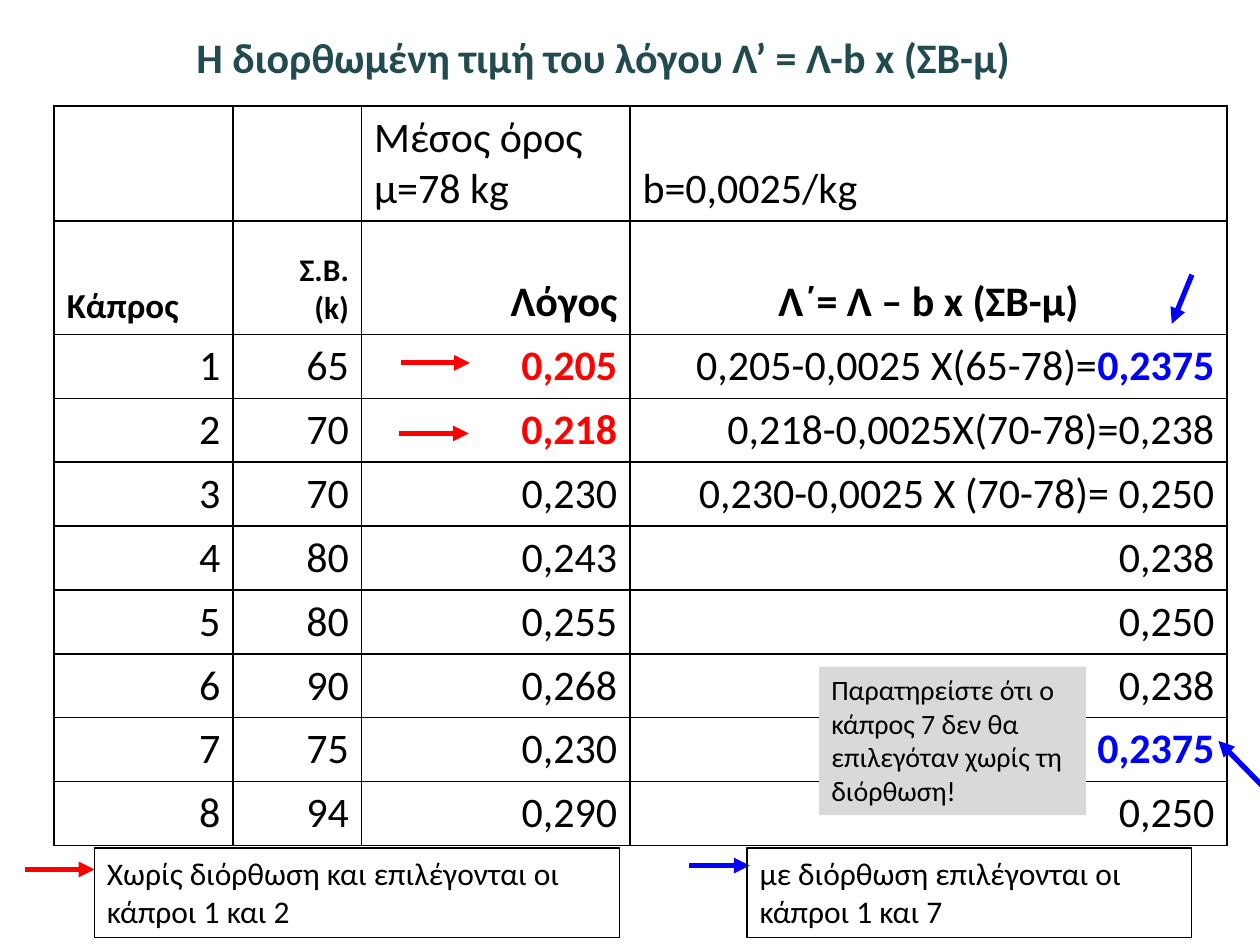
"""Build the slide that compares boar ratios before and after correction for body weight."""
from typing import NamedTuple, Optional

from lxml.etree import SubElement
from pptx import Presentation
from pptx.dml.color import RGBColor
from pptx.enum.shapes import MSO_CONNECTOR as Connector, MSO_SHAPE as Shape
from pptx.enum.text import MSO_ANCHOR as Anchor, PP_ALIGN as Align
from pptx.oxml.ns import qn
from pptx.util import Inches, Pt

BLACK = RGBColor(0x00, 0x00, 0x00)
RED = RGBColor(0xFF, 0x00, 0x00)
BLUE = RGBColor(0x00, 0x00, 0xFF)
TEAL = RGBColor(0x22, 0x4B, 0x50)
GREY = RGBColor(0xD9, 0xD9, 0xD9)
FONT = "Calibri"


class CellText(NamedTuple):
    text: str
    align: Align = Align.RIGHT
    size: int = 24
    bold: bool = False
    color: RGBColor = BLACK
    result: str = ""


class Box(NamedTuple):
    left: float
    top: float
    width: float
    height: float
    text: str
    size: int
    fill: Optional[RGBColor] = None


class Arrow(NamedTuple):
    start: tuple[float, float]
    end: tuple[float, float]
    color: RGBColor


COLUMN_WIDTHS = (1.42, 1.02, 2.13, 4.74)
ROW_HEIGHTS = (0.9, 0.9) + (0.5,) * 8
HEADERS = [
    [
        CellText(""),
        CellText(""),
        CellText("Μέσος όρος μ=78 kg", Align.LEFT),
        CellText("b=0,0025/kg", Align.LEFT),
    ],
    [
        CellText("Κάπρος", Align.LEFT, 20, True),
        CellText("Σ.Β.\v(k)", size=18, bold=True),
        CellText("Λόγος", bold=True),
        CellText("Λ΄= Λ – b x (ΣB-μ)", Align.CENTER, bold=True),
    ],
]
BOARS = [
    ("65", "0,205", "0,205-0,0025 Χ(65-78)=", "0,2375"),
    ("70", "0,218", "0,218-0,0025Χ(70-78)=0,238", ""),
    ("70", "0,230", "0,230-0,0025 Χ (70-78)= 0,250", ""),
    ("80", "0,243", "0,238", ""),
    ("80", "0,255", "0,250", ""),
    ("90", "0,268", "0,238", ""),
    ("75", "0,230", "", "0,2375"),
    ("94", "0,290", "0,250", ""),
]
SELECTED_UNCORRECTED = (1, 2)
UNCORRECTED_BOX = Box(0.75, 6.73, 4.17, 0.71, "Χωρίς διόρθωση και επιλέγονται οι κάπροι 1 και 2", 18)
CORRECTED_BOX = Box(5.93, 6.73, 3.53, 0.71, "με διόρθωση επιλέγονται οι κάπροι 1 και 7", 18)
NOTE = Box(6.5, 5.29, 2.12, 1.18, "Παρατηρείστε ότι ο κάπρος 7 δεν θα επιλεγόταν χωρίς τη διόρθωση!", 16, GREY)
ARROWS = [
    Arrow((3.18, 2.88), (3.73, 2.88), RED),
    Arrow((3.17, 3.44), (3.72, 3.44), RED),
    Arrow((0.2, 6.9), (0.75, 6.9), RED),
    Arrow((9.46, 2.18), (9.3, 2.57), BLUE),
    Arrow((10.05, 6.27), (9.67, 5.88), BLUE),
    Arrow((5.47, 6.87), (5.95, 6.87), BLUE),
]


def set_font(font, size: int, color: RGBColor, bold: bool = False) -> None:
    font.name = FONT
    font.size = Pt(size)
    font.bold = bold
    font.color.rgb = color


def boar_row(number: int, weight: str, ratio: str, formula: str, result: str) -> list[CellText]:
    selected = number in SELECTED_UNCORRECTED
    ratio_cell = CellText(ratio, bold=selected, color=RED if selected else BLACK)
    return [CellText(str(number)), CellText(weight), ratio_cell, CellText(formula, result=result)]


def add_borders(cell) -> None:
    properties = cell._tc.get_or_add_tcPr()
    for position, side in enumerate(("lnL", "lnR", "lnT", "lnB")):
        line = SubElement(properties, qn(f"a:{side}"), w=str(Pt(1)))
        fill = SubElement(line, qn("a:solidFill"))
        SubElement(fill, qn("a:srgbClr"), val=str(BLACK))
        properties.insert(position, line)


def fill_cell(cell, content: CellText) -> None:
    cell.fill.background()
    cell.vertical_anchor = Anchor.BOTTOM
    add_borders(cell)
    paragraph = cell.text_frame.paragraphs[0]
    paragraph.alignment = content.align
    set_font(paragraph.font, content.size, content.color, content.bold)
    if content.text:
        paragraph.text = content.text
    if content.result:
        run = paragraph.add_run()
        run.text = content.result
        set_font(run.font, content.size, BLUE, True)


def add_ratio_table(slide) -> None:
    rows = HEADERS + [boar_row(number, *boar) for number, boar in enumerate(BOARS, 1)]
    frame = slide.shapes.add_table(
        len(rows), len(COLUMN_WIDTHS), Inches(0.43), Inches(0.84),
        Inches(sum(COLUMN_WIDTHS)), Inches(sum(ROW_HEIGHTS)),
    )
    table = frame.table
    table.first_row = table.horz_banding = False
    for column, width in zip(table.columns, COLUMN_WIDTHS):
        column.width = Inches(width)
    for row, height, contents in zip(table.rows, ROW_HEIGHTS, rows):
        row.height = Inches(height)
        for cell, content in zip(row.cells, contents):
            fill_cell(cell, content)


def add_box(slide, box: Box) -> None:
    shape = slide.shapes.add_shape(
        Shape.RECTANGLE, Inches(box.left), Inches(box.top), Inches(box.width), Inches(box.height)
    )
    shape.shadow.inherit = False
    if box.fill is None:
        shape.fill.background()
        shape.line.color.rgb = BLACK
        shape.line.width = Pt(0.75)
    else:
        shape.fill.solid()
        shape.fill.fore_color.rgb = box.fill
        shape.line.fill.background()
    shape.text_frame.word_wrap = True
    shape.text_frame.vertical_anchor = Anchor.TOP
    paragraph = shape.text_frame.paragraphs[0]
    paragraph.text = box.text
    paragraph.alignment = Align.LEFT
    set_font(paragraph.font, box.size, BLACK)


def add_arrow(slide, arrow: Arrow) -> None:
    ends = [Inches(value) for value in arrow.start + arrow.end]
    connector = slide.shapes.add_connector(Connector.STRAIGHT, *ends)
    connector.line.color.rgb = arrow.color
    connector.line.width = Pt(3)
    SubElement(connector.line._get_or_add_ln(), qn("a:tailEnd"), type="triangle")
    SubElement(connector._element.spPr, qn("a:effectLst"))


def add_title(slide) -> None:
    title = slide.shapes.add_textbox(Inches(1.46), Inches(0.2), Inches(6.72), Inches(0.5))
    title.text_frame.word_wrap = False
    paragraph = title.text_frame.paragraphs[0]
    paragraph.text = "Η διορθωμένη τιμή του λόγου Λ’ = Λ-b x (ΣΒ-μ)"
    set_font(paragraph.font, 24, TEAL, True)


def main() -> None:
    presentation = Presentation()
    presentation.slide_width = Inches(10)
    presentation.slide_height = Inches(7.5)
    slide = presentation.slides.add_slide(presentation.slide_layouts[6])
    add_ratio_table(slide)
    add_box(slide, UNCORRECTED_BOX)
    for arrow in ARROWS:
        add_arrow(slide, arrow)
    add_box(slide, CORRECTED_BOX)
    add_title(slide)
    add_box(slide, NOTE)
    presentation.save("out.pptx")


if __name__ == "__main__":
    main()
